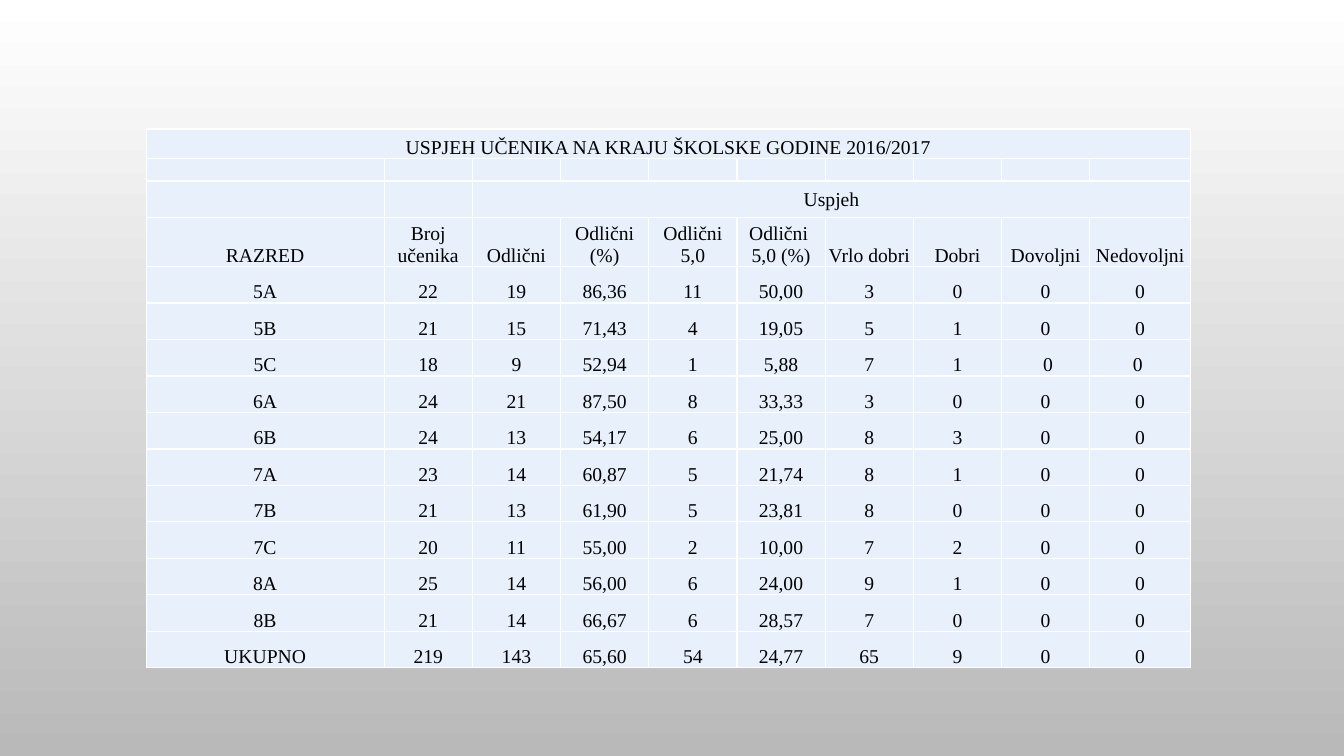
from dataclasses import dataclass

from lxml.etree import SubElement
from pptx import Presentation
from pptx.dml.color import RGBColor
from pptx.enum.text import MSO_ANCHOR as Anchor, PP_ALIGN as Align
from pptx.oxml.ns import qn
from pptx.slide import Slide
from pptx.table import Table, _Cell as Cell
from pptx.util import Inches, Pt

WHITE = RGBColor(0xFF, 0xFF, 0xFF)
GREY = RGBColor(0xB9, 0xB9, 0xB9)
PALE_BLUE = RGBColor(0xE8, 0xF0, 0xFC)
BLACK = RGBColor(0x00, 0x00, 0x00)
FONT = "Times New Roman"
SIZE = 14

# Table geometry in inches
LEFT, TOP, WIDTH, HEIGHT = 1.45, 1.28, 10.36, 5.34
FIRST_COLUMN, LAST_COLUMN = 2.36, 1.0
HEADING_ROWS = [0.29, 0.22, 0.36, 0.49]

HEADERS = [
    "RAZRED", "Broj učenika", "Odlični", "Odlični (%)", "Odlični 5,0",
    "Odlični \n5,0 (%)", "Vrlo dobri", "Dobri", "Dovoljni", "Nedovoljni",
]
RESULTS = [
    "5A;22;19;86,36;11;50,00;3;0;0;0",
    "5B;21;15;71,43;4;19,05;5;1;0;0",
    "5C;18;9;52,94;1;5,88;7;1; 0;0 ",
    "6A;24;21;87,50;8;33,33;3;0;0;0",
    "6B;24;13;54,17;6;25,00;8;3;0;0",
    "7A;23;14;60,87;5;21,74;8;1;0;0",
    "7B;21;13;61,90;5;23,81;8;0;0;0",
    "7C;20;11;55,00;2;10,00;7;2;0;0",
    "8A;25;14;56,00;6;24,00;9;1;0;0",
    "8B;21;14;66,67;6;28,57;7;0;0;0",
    "UKUPNO;219;143;65,60;54;24,77;65;9;0;0",
]


@dataclass
class Heading:
    """A label that spans the columns from first to the last one."""
    text: str
    row: int
    first: int
    anchor: Anchor


HEADINGS = [
    Heading("USPJEH UČENIKA NA KRAJU ŠKOLSKE GODINE 2016/2017", 0, 0, Anchor.BOTTOM),
    Heading("Uspjeh", 2, 2, Anchor.MIDDLE),
]


def write_text(cell: Cell, text: str, *, size: float = SIZE, color: RGBColor = BLACK,
               anchor: Anchor = Anchor.BOTTOM) -> None:
    cell.vertical_anchor = anchor
    paragraph = cell.text_frame.paragraphs[0]
    paragraph.text = text
    paragraph.alignment = Align.CENTER
    for run in paragraph.runs:
        run.font.name = FONT
        run.font.size = Pt(size)
        run.font.color.rgb = color
    if not text:  # an empty cell keeps the text size for its row height
        end = SubElement(paragraph._p, qn("a:endParaRPr"), sz=str(size * 100))
        SubElement(end, qn("a:latin"), typeface=FONT)


def style_cell(cell: Cell) -> None:
    cell.margin_left = cell.margin_right = cell.margin_top = Inches(0.01)
    cell.margin_bottom = 0
    properties = cell._tc.get_or_add_tcPr()
    for side in ("a:lnL", "a:lnR", "a:lnT", "a:lnB"):
        line = SubElement(properties, qn(side), w=str(Pt(1)))
        fill = SubElement(line, qn("a:solidFill"))
        SubElement(fill, qn("a:srgbClr"), val=str(WHITE))
    cell.fill.solid()
    cell.fill.fore_color.rgb = PALE_BLUE


def paint_background(slide: Slide) -> None:
    fill = slide.background.fill
    fill.gradient()
    fill.gradient_angle = 270
    for stop, position, color in zip(fill.gradient_stops, (0, 1), (WHITE, GREY)):
        stop.position = position
        stop.color.rgb = color


def add_results_table(slide: Slide) -> Table:
    column_count = len(HEADERS)
    middle = (WIDTH - FIRST_COLUMN - LAST_COLUMN) / (column_count - 2)
    widths = [FIRST_COLUMN] + [middle] * (column_count - 2) + [LAST_COLUMN]
    result_height = (HEIGHT - sum(HEADING_ROWS)) / len(RESULTS)
    heights = HEADING_ROWS + [result_height] * len(RESULTS)

    table = slide.shapes.add_table(len(heights), column_count, Inches(LEFT), Inches(TOP),
                                   Inches(WIDTH), Inches(HEIGHT)).table
    table.first_row = table.horz_banding = False
    for column, width in zip(table.columns, widths):
        column.width = Inches(width)
    for row, height in zip(table.rows, heights):
        row.height = Inches(height)

    # Heading rows start blank; column labels and results follow
    blank = [""] * column_count
    contents = [blank] * 3 + [HEADERS] + [result.split(";") for result in RESULTS]
    for row, texts in zip(table.rows, contents):
        for cell, text in zip(row.cells, texts):
            style_cell(cell)
            write_text(cell, text)

    # Spanning headings
    for heading in HEADINGS:
        cell = table.cell(heading.row, heading.first)
        cell.merge(table.cell(heading.row, column_count - 1))
        write_text(cell, heading.text, anchor=heading.anchor)
    return table


def main() -> None:
    presentation = Presentation()
    presentation.slide_width = Inches(13.33)
    presentation.slide_height = Inches(7.5)
    slide = presentation.slides.add_slide(presentation.slide_layouts[6])
    paint_background(slide)
    add_results_table(slide)
    presentation.save("out.pptx")


if __name__ == "__main__":
    main()
